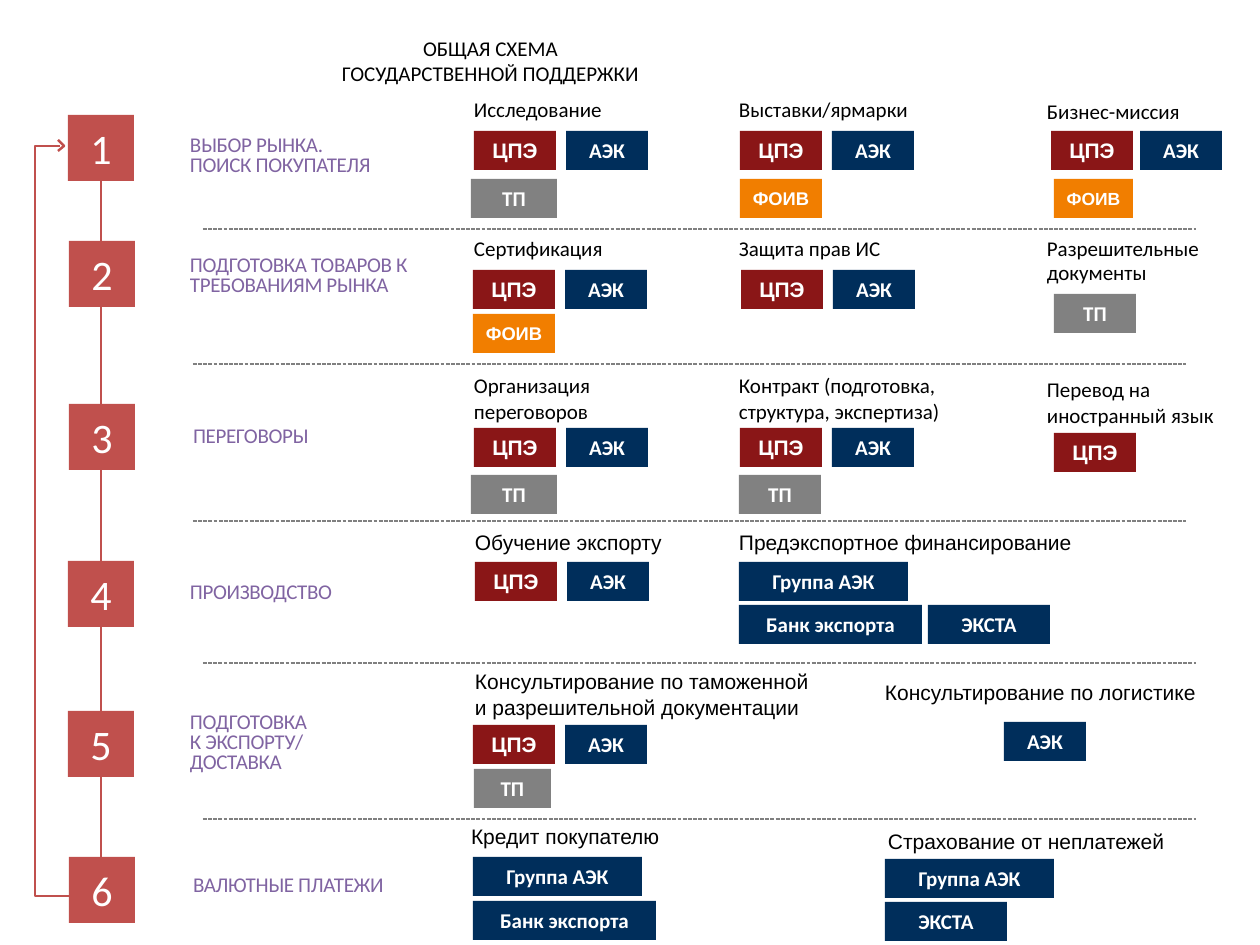
import pptx
import pptx.dml.color
import pptx.enum.dml
import pptx.enum.shapes
import pptx.enum.text
import pptx.util
from pptx.oxml.ns import qn

SCALE = 914400 / 126
RED = "C0504D"
ALIGN = pptx.enum.text.PP_ALIGN
ANCHOR = pptx.enum.text.MSO_ANCHOR

HEAD = {"name": "Calibri", "size": 12}
WIDE = {"name": "Arial", "size": 12}
LABEL = {"name": "Calibri", "size": 12}
DIGIT = {"name": "Calibri", "size": 24}
BOLD = {"name": "Calibri", "size": 12, "bold": True}

# name: fill, width, font
KINDS = {
    "ЦПЭ": ("8A1617", 82, BOLD | WIDE),
    "АЭК": ("002E5B", 82, BOLD),
    "ТП": ("818181", 82, BOLD),
    "ФОИВ": ("F17E00", 82, BOLD | {"name": "Arial", "size": 10.5}),
    "Группа АЭК": ("002E5B", 169, BOLD),
    "Банк экспорта": ("002E5B", 183, BOLD),
    "ЭКСТА": ("002E5B", 122, BOLD),
}
PAIR = ["ЦПЭ", "АЭК"]

# box left and top, label left, top, width and text
STAGES = [
    (68, 115, 190, 136, 195, "ВЫБОР РЫНКА. ПОИСК ПОКУПАТЕЛЯ"),
    (69, 241, 190, 256, 221, "ПОДГОТОВКА ТОВАРОВ К ТРЕБОВАНИЯМ РЫНКА"),
    (69, 404, 193, 427, 195, "ПЕРЕГОВОРЫ"),
    (68, 561, 190, 583, 217, "ПРОИЗВОДСТВО"),
    (68, 711, 190, 713, 195, "ПОДГОТОВКА\nК ЭКСПОРТУ/ ДОСТАВКА"),
    (69, 857, 193, 876, 195, "ВАЛЮТНЫЕ ПЛАТЕЖИ"),
]

# left, top, width, text, font, line spacing
HEADS = [
    (474, 97, 145, "Исследование", HEAD, 1),
    (739, 97, 184, "Выставки/ярмарки", HEAD, 1),
    (1047, 99, 150, "Бизнес-миссия", HEAD, 1),
    (474, 236, 149, "Сертификация", HEAD, 1),
    (739, 237, 222, "Защита прав ИС", HEAD, 0.95),
    (1047, 237, 213, "Разрешительные документы", HEAD, 0.95),
    (474, 373, 275, "Организация\nпереговоров", HEAD, 1),
    (739, 373, 226, "Контракт (подготовка,\nструктура, экспертиза)", HEAD, 1),
    (1047, 377, 213, "Перевод на иностранный язык", HEAD, 1),
    (475, 530, 192, "Обучение экспорту", WIDE, 1),
    (739, 530, 383, "Предэкспортное финансирование", WIDE, 1),
    (475, 669, 365, "Консультирование по таможенной\nи разрешительной документации", WIDE, 1),
    (885, 680, 350, "Консультирование по логистике", WIDE, 1),
    (471, 824, 193, "Кредит покупателю", WIDE, 1),
    (888, 829, 338, "Страхование от неплатежей", WIDE, 1),
]

# left, top, names in a row, changes to gap, width or size
ROWS = [
    (474, 131, PAIR, {}),
    (471, 179, ["ТП"], {"wide": 86}),
    (740, 131, PAIR, {}),
    (740, 179, ["ФОИВ"], {}),
    (1051, 131, PAIR, {"gap": 7}),
    (1054, 179, ["ФОИВ"], {"wide": 79, "size": 10}),
    (473, 270, PAIR, {}),
    (473, 314, ["ФОИВ"], {}),
    (741, 270, PAIR, {}),
    (1054, 294, ["ТП"], {}),
    (474, 428, PAIR, {}),
    (471, 475, ["ТП"], {"wide": 86}),
    (740, 428, PAIR, {}),
    (739, 475, ["ТП"], {}),
    (1054, 433, ["ЦПЭ"], {}),
    (475, 562, PAIR, {}),
    (739, 562, ["Группа АЭК"], {}),
    (739, 605, ["Банк экспорта", "ЭКСТА"], {"gap": 6}),
    (473, 725, PAIR, {}),
    (474, 769, ["ТП"], {"wide": 77}),
    (1004, 722, ["АЭК"], {}),
    (473, 857, ["Группа АЭК"], {}),
    (473, 901, ["Банк экспорта"], {}),
    (885, 859, ["Группа АЭК"], {}),
    (885, 902, ["ЭКСТА"], {}),
]

RULES = [(203, 229), (193, 364), (193, 521), (203, 663), (203, 819)]


def px(*nums):
    return [pptx.util.Emu(round(n * SCALE)) for n in nums]


def tint(hue):
    return pptx.dml.color.RGBColor.from_string(hue)


def write(frame, text, look, hue, align=ALIGN.LEFT, space=1.0, track=None):
    frame.text = text
    for para in frame.paragraphs:
        para.alignment = align
        para.line_spacing = space
        for run in para.runs:
            for key, val in look.items():
                setattr(run.font, key, pptx.util.Pt(val) if key == "size" else val)
            run.font.color.rgb = tint(hue)
            if track:
                run._r.get_or_add_rPr().set("spc", str(track))


def trim(frame, anchor):
    """Clear the insets, wrap the text and set its anchor."""
    for side in ("left", "top", "right", "bottom"):
        setattr(frame, "margin_" + side, 0)
    frame.word_wrap = True
    frame.vertical_anchor = anchor


def note(slide, left, top, wide, text, look, hue="000000", **form):
    lines = text.count("\n") + 1
    frame = slide.shapes.add_textbox(*px(left, top, wide, 25 * lines)).text_frame
    trim(frame, ANCHOR.TOP)
    frame.auto_size = pptx.enum.text.MSO_AUTO_SIZE.SHAPE_TO_FIT_TEXT
    write(frame, text, look, hue, **form)


def block(slide, left, top, wide, high, fill, text, look):
    kind = pptx.enum.shapes.MSO_SHAPE.RECTANGLE
    shape = slide.shapes.add_shape(kind, *px(left, top, wide, high))
    shape.shadow.inherit = False
    shape.fill.solid()
    shape.fill.fore_color.rgb = tint(fill)
    shape.line.fill.background()
    trim(shape.text_frame, ANCHOR.MIDDLE)
    write(shape.text_frame, text, look, "FFFFFF", ALIGN.CENTER)


def row(slide, left, top, names, gap=10, wide=None, size=None):
    for name in names:
        fill, width, look = KINDS[name]
        width = wide or width
        if size:
            look = look | {"size": size}
        block(slide, left, top, width, 39, fill, name, look)
        left += width + gap


def trace(slide, start, *points):
    """Draw an open red outline through the points."""
    pen = slide.shapes.build_freeform(*start, scale=SCALE)
    pen.add_line_segments(points, close=False)
    shape = pen.convert_to_shape()
    shape.shadow.inherit = False
    shape.fill.background()
    shape.line.color.rgb = tint(RED)
    shape.line.width = pptx.util.Pt(1.38)


def rule(slide, left, top):
    kind = pptx.enum.shapes.MSO_CONNECTOR.STRAIGHT
    line = slide.shapes.add_connector(kind, *px(left, top, left + 993, top))
    line.line.color.rgb = tint("808080")
    line.line.width = pptx.util.Pt(0.75)
    line.line.dash_style = pptx.enum.dml.MSO_LINE.SQUARE_DOT
    line._element.spPr.append(line._element.makeelement(qn("a:effectLst"), {}))


def head(slide):
    title = slide.shapes.title
    title.left, title.top, title.width, title.height = px(64, 26, 853, 69)
    title.text_frame.vertical_anchor = ANCHOR.MIDDLE
    write(title.text_frame, "ОБЩАЯ СХЕМА\nГОСУДАРСТВЕННОЙ ПОДДЕРЖКИ", HEAD,
          "000000", ALIGN.CENTER)


def main():
    deck = pptx.Presentation()
    deck.slide_width, deck.slide_height = px(1260, 945)
    slide = deck.slides.add_slide(deck.slide_layouts[5])
    head(slide)
    trace(slide, (73, 146), (101, 146), (101, 896), (35, 896), (35, 146), (60, 146))
    trace(slide, (58, 140), (64, 146), (58, 151))
    for num, (left, top, *label, text) in enumerate(STAGES, 1):
        block(slide, left, top, 66, 66, RED, str(num), DIGIT)
        note(slide, *label, text, LABEL, "8064A2", space=0.8, track=-20)
    for *place, space in HEADS:
        note(slide, *place, space=space)
    for left, top, names, form in ROWS:
        row(slide, left, top, names, **form)
    for spot in RULES:
        rule(slide, *spot)
    deck.save("out.pptx")


if __name__ == "__main__":
    main()
